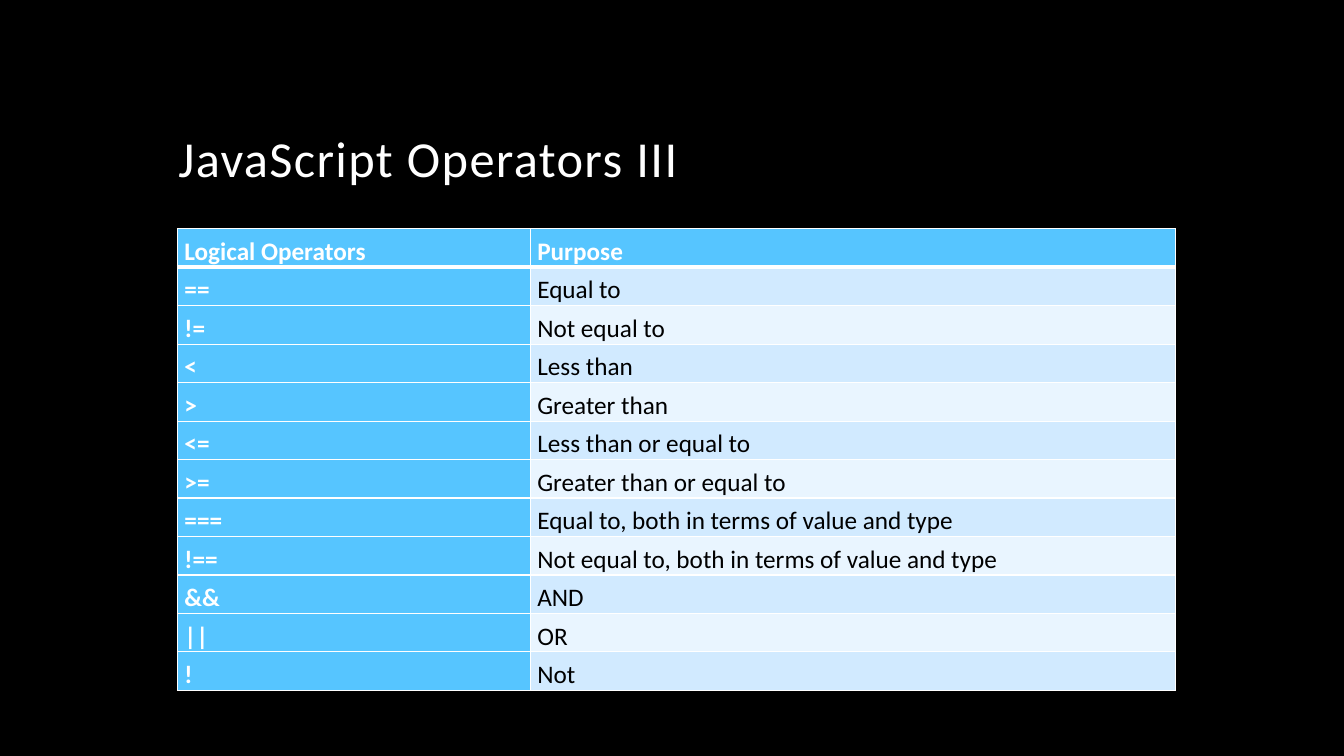
import pptx
import pptx.dml.color
import pptx.enum.text
import pptx.oxml
import pptx.oxml.ns
import pptx.util

Inches = pptx.util.Inches
Pt = pptx.util.Pt
RGBColor = pptx.dml.color.RGBColor
Align = pptx.enum.text.PP_ALIGN

BLACK = RGBColor(0x00, 0x00, 0x00)
WHITE = RGBColor(0xFF, 0xFF, 0xFF)
BLUE = RGBColor(0x56, 0xC5, 0xFF)
PALE = RGBColor(0xD1, 0xEA, 0xFF)
FAINT = RGBColor(0xE9, 0xF5, 0xFF)

ROWS = [
    ("Logical Operators", "Purpose"),
    ("==", "Equal to"),
    ("!=", "Not equal to"),
    ("<", "Less than"),
    (">", "Greater than"),
    ("<=", "Less than or equal to"),
    (">=", "Greater than or equal to"),
    ("===", "Equal to, both in terms of value and type"),
    ("!==", "Not equal to, both in terms of value and type"),
    ("&&", "AND"),
    ("||", "OR"),
    ("!", "Not"),
]


def style(font, size, color, bold):
    font.name = "Calibri"
    font.size = Pt(size)
    font.bold = bold
    font.color.rgb = color


def border(cell, widths):
    props = cell._tc.get_or_add_tcPr()
    for place, (side, width) in enumerate(widths.items()):
        line = pptx.oxml.parse_xml(
            f'<a:ln{side} {pptx.oxml.ns.nsdecls("a")} w="{Pt(width)}">'
            f'<a:solidFill><a:srgbClr val="{WHITE}"/></a:solidFill></a:ln{side}>'
        )
        props.insert(place, line)


# Slide with a black background
deck = pptx.Presentation()
deck.slide_width = Inches(13.33)
deck.slide_height = Inches(7.5)
slide = deck.slides.add_slide(deck.slide_layouts[5])
slide.background.fill.solid()
slide.background.fill.fore_color.rgb = BLACK

# Title
title = slide.shapes.title
title.left, title.top = Inches(1.67), Inches(0.42)
title.width, title.height = Inches(10), Inches(1.5)
frame = title.text_frame
frame.text = "JavaScript Operators III"
frame.auto_size = pptx.enum.text.MSO_AUTO_SIZE.NONE
frame.vertical_anchor = pptx.enum.text.MSO_ANCHOR.BOTTOM
para = frame.paragraphs[0]
para.alignment = Align.LEFT
para.line_spacing = 0.9
run = para.runs[0]
style(run.font, 36, WHITE, False)
run.font._element.set("spc", "100")

# Operator table
table = slide.shapes.add_table(
    len(ROWS), 2, Inches(1.76), Inches(2.27), Inches(9.9), Inches(4.2)
).table
table.columns[0].width = Inches(3.5)
table.columns[1].width = Inches(6.4)

for r, texts in enumerate(ROWS):
    table.rows[r].height = Inches(0.35)
    for c, text in enumerate(texts):
        cell = table.cell(r, c)
        head = r == 0 or c == 0
        cell.margin_left = cell.margin_right = Inches(0.07)
        cell.margin_top = cell.margin_bottom = 0
        cell.fill.solid()
        cell.fill.fore_color.rgb = BLUE if head else PALE if r % 2 else FAINT
        cell.text_frame.text = text
        para = cell.text_frame.paragraphs[0]
        para.alignment = Align.JUSTIFY
        para.line_spacing = 1.25
        style(para.runs[0].font, 18, WHITE if head else BLACK, head)
        # A thicker rule parts the header from the body
        border(cell, {"L": 1, "R": 1, "T": 3 if r == 1 else 1, "B": 3 if r == 0 else 1})

deck.save("out.pptx")
